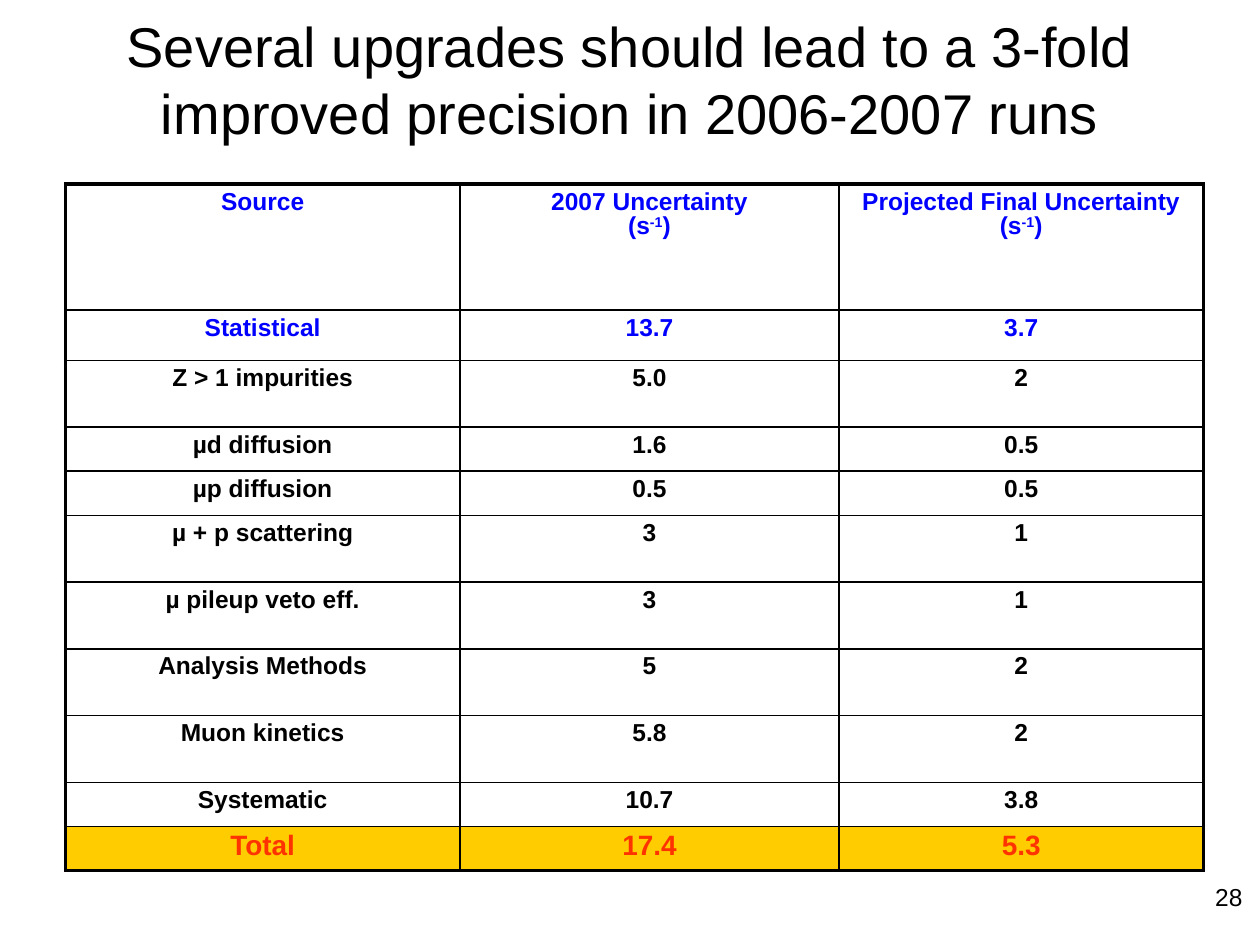
"""Build the slide on projected uncertainties of the 2006-2007 runs."""
from lxml.etree import SubElement
from pptx import Presentation
from pptx.dml.color import RGBColor
from pptx.enum.text import MSO_ANCHOR, PP_ALIGN
from pptx.oxml import parse_xml
from pptx.oxml.ns import nsdecls, qn
from pptx.util import Inches, Pt

THEME = {
    "font": "Arial",
    "black": "000000", "blue": "0000FF", "red": "FF3300", "gold": "FFCC00",
    "title": 32, "body": 14, "total": 16,
    "outer": 2.25, "inner": 1,
}

TITLE = "Several upgrades should lead to a 3-fold\vimproved precision in 2006-2007 runs"
PAGE = "28"
UNIT_POWER = "-1"
HEADER = ["Source", "2007 Uncertainty\v(s", "Projected Final Uncertainty (s"]
ROWS = [
    (0.4, "Statistical", "13.7", "3.7"),
    (0.53, "Z > 1 impurities", "5.0", "2"),
    (0.35, "µd diffusion", "1.6", "0.5"),
    (0.35, "µp diffusion", "0.5", "0.5"),
    (0.53, "µ + p scattering", "3", "1"),
    (0.53, "µ pileup veto eff.", "3", "1"),
    (0.53, "Analysis Methods", "5", "2"),
    (0.53, "Muon kinetics", "5.8", "2"),
    (0.35, "Systematic", "10.7", "3.8"),
    (0.35, "Total", "17.4", "5.3"),
]
COL_WIDTHS = [3.13, 3.01, 2.89]
HEADER_HEIGHT = 1


def style(p, size, color, align, bold=False):
    p.alignment = align
    p.font.name = THEME["font"]
    p.font.size = Pt(size)
    p.font.bold = bold
    p.font.color.rgb = RGBColor.from_string(color)


def set_borders(cell, outer_sides):
    tcPr = cell._tc.get_or_add_tcPr()
    for side in "LRTB":
        width = Pt(THEME["outer" if side in outer_sides else "inner"])
        tcPr.append(parse_xml(
            f'<a:ln{side} {nsdecls("a")} w="{width}"><a:solidFill>'
            f'<a:srgbClr val="{THEME["black"]}"/></a:solidFill></a:ln{side}>'))


def space_before_percent(p, percent):
    pPr = p._p.get_or_add_pPr()
    spacing = SubElement(pPr, qn("a:spcBef"))
    SubElement(spacing, qn("a:spcPct")).set("val", str(percent * 1000))
    pPr.find(qn("a:lnSpc")).addnext(spacing)


def fill_cell(cell, text, size, color, fill, outer_sides, has_unit):
    p = cell.text_frame.paragraphs[0]
    p.text = text
    if has_unit:
        power = p.add_run()
        power.text = UNIT_POWER
        power.font._element.set("baseline", "30000")
        p.add_run().text = ")"
    style(p, size, color, PP_ALIGN.CENTER, True)
    p.line_spacing = 0.9
    space_before_percent(p, 30)
    set_borders(cell, outer_sides)
    if fill:
        cell.fill.solid()
        cell.fill.fore_color.rgb = RGBColor.from_string(fill)
    else:
        cell.fill.background()


def add_uncertainty_table(s):
    heights = [HEADER_HEIGHT] + [row[0] for row in ROWS]
    texts = [HEADER] + [row[1:] for row in ROWS]
    last_row, last_col = len(texts) - 1, len(COL_WIDTHS) - 1
    table = s.shapes.add_table(
        len(texts), len(COL_WIDTHS), Inches(0.52), Inches(1.46),
        Inches(sum(COL_WIDTHS)), Inches(sum(heights))).table
    table.first_row = table.horz_banding = False
    for column, width in zip(table.columns, COL_WIDTHS):
        column.width = Inches(width)
    for i, (height, row) in enumerate(zip(heights, texts)):
        table.rows[i].height = Inches(height)
        size, color, fill = THEME["body"], THEME["blue" if i < 2 else "black"], None
        if i == last_row:
            size, color, fill = THEME["total"], THEME["red"], THEME["gold"]
        for j, text in enumerate(row):
            edges = {"T": i == 0, "B": i == last_row, "L": j == 0, "R": j == last_col}
            outer_sides = [side for side, on_edge in edges.items() if on_edge]
            fill_cell(table.cell(i, j), text, size, color, fill, outer_sides,
                      i == 0 and j > 0)


def main():
    prs = Presentation()
    prs.slide_width, prs.slide_height = Inches(10), Inches(7.5)
    s = prs.slides.add_slide(prs.slide_layouts[5])

    title = s.shapes.title
    title.left, title.top = Inches(0.5), Inches(0)
    title.width, title.height = Inches(9), Inches(1.25)
    tf = title.text_frame
    tf.text = TITLE
    tf.vertical_anchor = MSO_ANCHOR.MIDDLE
    style(tf.paragraphs[0], THEME["title"], THEME["black"], PP_ALIGN.CENTER)

    add_uncertainty_table(s)

    tf = s.shapes.add_textbox(
        Inches(7.63), Inches(6.95), Inches(2.33), Inches(0.52)).text_frame
    tf.word_wrap = True
    tf.text = PAGE
    style(tf.paragraphs[0], THEME["body"], THEME["black"], PP_ALIGN.RIGHT)

    prs.save("out.pptx")


if __name__ == "__main__":
    main()
